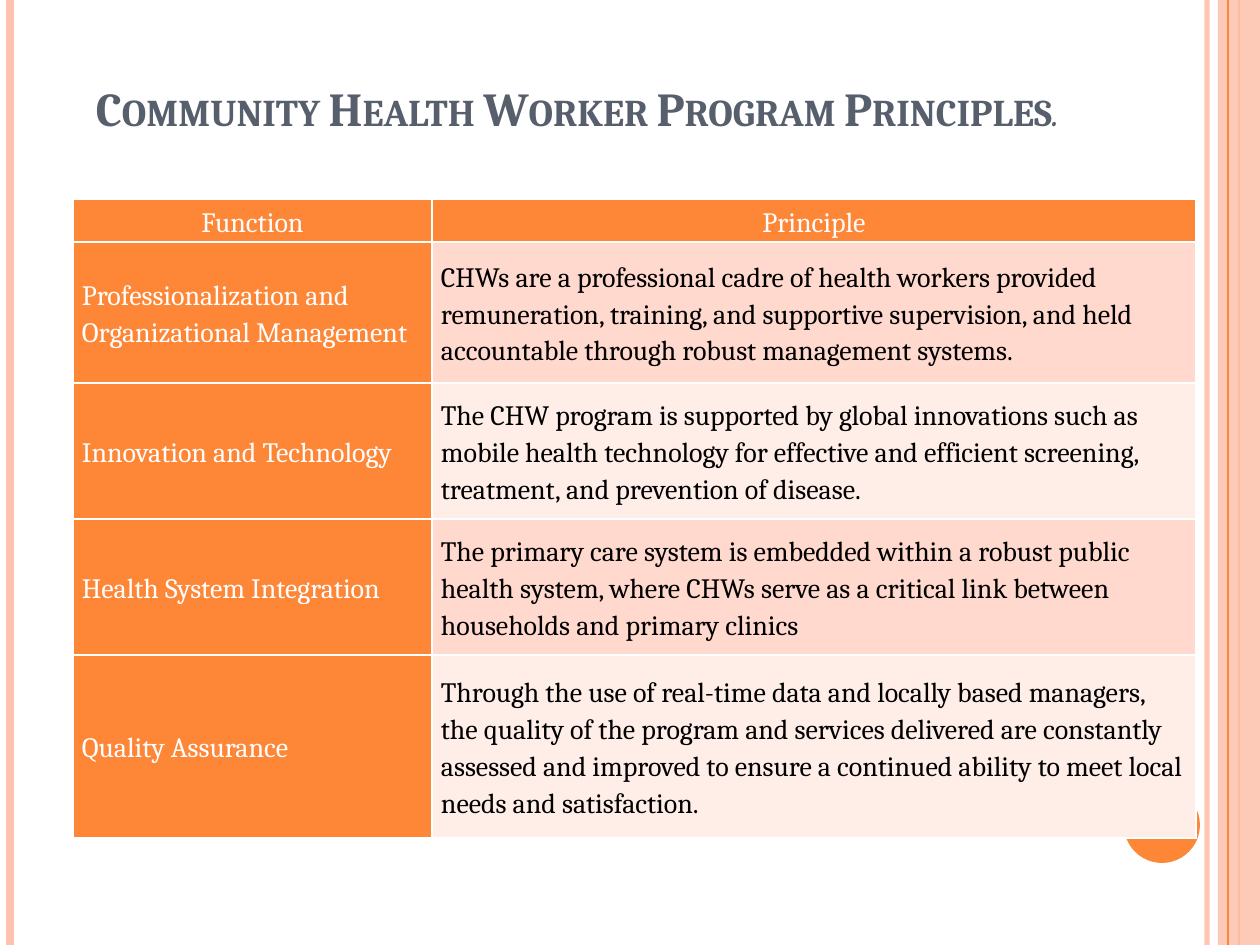
import pptx
import pptx.util
import pptx.dml.color
import pptx.enum.shapes
import pptx.enum.text
import pptx.oxml
import pptx.oxml.ns
from dataclasses import dataclass

PX = 914400 / 126
SHAPE = pptx.enum.shapes.MSO_SHAPE
ALIGN = pptx.enum.text.PP_ALIGN
ANCHOR = pptx.enum.text.MSO_ANCHOR


@dataclass(frozen=True)
class Theme:
    font: str = "Cambria"
    orange: str = "FE8637"
    peach: str = "FEC3AE"
    bands: tuple = ("FFD9CE", "FFEDE8")
    slate: str = "575F6D"
    white: str = "FFFFFF"
    black: str = "000000"
    title_size: int = 27
    table_size: int = 16
    border_pt: int = 1


THEME = Theme()

TITLE = "Community Health Worker Program Principles"
HEADER = ("Function", "Principle")
PRINCIPLES = [
    ("Professionalization and Organizational Management",
     "CHWs are a professional cadre of health workers provided remuneration, "
     "training, and supportive supervision, and held accountable through "
     "robust management systems."),
    ("Innovation and Technology",
     "The CHW program is supported by global innovations such as mobile health "
     "technology for effective and efficient screening, treatment, and "
     "prevention of disease."),
    ("Health System Integration",
     "The primary care system is embedded within a robust public health "
     "system, where CHWs serve as a critical link between households and "
     "primary clinics"),
    ("Quality Assurance",
     "Through the use of real-time data and locally based managers, the "
     "quality of the program and services delivered are constantly assessed "
     "and improved to ensure a continued ability to meet local needs and "
     "satisfaction."),
]
COL_WIDTHS = (359, 764)
ROW_HEIGHTS = (43, 141, 136, 136, 183)


def px(n):
    return pptx.util.Emu(round(n * PX))


def rgb(color):
    return pptx.dml.color.RGBColor.from_string(color)


def set_opacity(element, percent):
    """Make the first solid colour inside element partly transparent."""
    color = element.find(".//" + pptx.oxml.ns.qn("a:srgbClr"))
    alpha = color.makeelement(pptx.oxml.ns.qn("a:alpha"), {"val": str(percent * 1000)})
    color.append(alpha)


def set_font(font, size, color):
    font.name = THEME.font
    font.size = pptx.util.Pt(size)
    font.color.rgb = rgb(color)


def add_rule(slide, x, color, width, opacity=100):
    """Full-height vertical line."""
    line = slide.shapes.add_connector(
        pptx.enum.shapes.MSO_CONNECTOR.STRAIGHT, px(x), 0, px(x), px(945))
    line.line.color.rgb = rgb(color)
    line.line.width = pptx.util.Pt(width)
    sp_pr = line._element.spPr
    sp_pr.append(sp_pr.makeelement(pptx.oxml.ns.qn("a:effectLst"), {}))
    if opacity < 100:
        set_opacity(sp_pr, opacity)


def add_block(slide, kind, x, y, w, h, color, opacity=100):
    sp = slide.shapes.add_shape(kind, px(x), px(y), px(w), px(h))
    sp.shadow.inherit = False
    sp.fill.solid()
    sp.fill.fore_color.rgb = rgb(color)
    sp.line.fill.background()
    if opacity < 100:
        set_opacity(sp._element.spPr, opacity)


def add_title(slide, x, y, w, h):
    box = slide.shapes.add_textbox(px(x), px(y), px(w), px(h))
    tf = box.text_frame
    tf.word_wrap = True
    tf.vertical_anchor = ANCHOR.MIDDLE
    p = tf.paragraphs[0]
    p.alignment = ALIGN.CENTER
    for text, bold in ((TITLE, True), (".", False)):
        r = p.add_run()
        r.text = text
        set_font(r.font, THEME.title_size, THEME.slate)
        r.font.bold = bold
        r.font.italic = not bold
        r._r.get_or_add_rPr().set("cap", "small")


def set_borders(cell):
    tc_pr = cell._tc.get_or_add_tcPr()
    width = pptx.util.Pt(THEME.border_pt)
    for i, side in enumerate("LRTB"):
        tc_pr.insert(i, pptx.oxml.parse_xml(
            f'<a:ln{side} {pptx.oxml.ns.nsdecls("a")} w="{width}"><a:solidFill>'
            f'<a:srgbClr val="{THEME.white}"/></a:solidFill></a:ln{side}>'))


def fill_cell(cell, text, fill, color, align=ALIGN.LEFT, space=0):
    cell.fill.solid()
    cell.fill.fore_color.rgb = rgb(fill)
    set_borders(cell)
    cell.vertical_anchor = ANCHOR.MIDDLE
    cell.margin_left = cell.margin_right = px(9)
    cell.margin_top = cell.margin_bottom = 0
    cell.text = text
    p = cell.text_frame.paragraphs[0]
    p.alignment = align
    p.line_spacing = 1.15
    p.space_before = p.space_after = pptx.util.Pt(space)
    set_font(p.font, THEME.table_size, color)


def add_principles_table(slide, x, y):
    table = slide.shapes.add_table(
        len(ROW_HEIGHTS), len(COL_WIDTHS), px(x), px(y),
        px(sum(COL_WIDTHS)), px(sum(ROW_HEIGHTS))).table
    for column, width in zip(table.columns, COL_WIDTHS):
        column.width = px(width)
    for row, height in zip(table.rows, ROW_HEIGHTS):
        row.height = px(height)
    for c, text in enumerate(HEADER):
        fill_cell(table.cell(0, c), text, THEME.orange, THEME.white, ALIGN.CENTER)
    for i, (function, principle) in enumerate(PRINCIPLES):
        fill_cell(table.cell(i + 1, 0), function, THEME.orange, THEME.white)
        fill_cell(table.cell(i + 1, 1), principle, THEME.bands[i % 2],
                  THEME.black, space=6)


def main():
    prs = pptx.Presentation()
    prs.slide_width, prs.slide_height = px(1260), px(945)
    slide = prs.slides.add_slide(prs.slide_layouts[6])

    # Side stripes and corner disc
    add_rule(slide, 1207, THEME.peach, 3, opacity=93)
    add_rule(slide, 10, THEME.peach, 4.5)
    add_rule(slide, 1239, THEME.orange, 1.5)
    add_block(slide, SHAPE.RECTANGLE, 1218, 0, 42, 945, THEME.peach, opacity=87)
    add_rule(slide, 1228, THEME.orange, 0.75)
    add_block(slide, SHAPE.OVAL, 1124, 787, 76, 76, THEME.orange)

    # Title and table
    add_title(slide, 63, 21, 1029, 174)
    add_principles_table(slide, 73, 199)

    prs.save("out.pptx")


if __name__ == "__main__":
    main()
